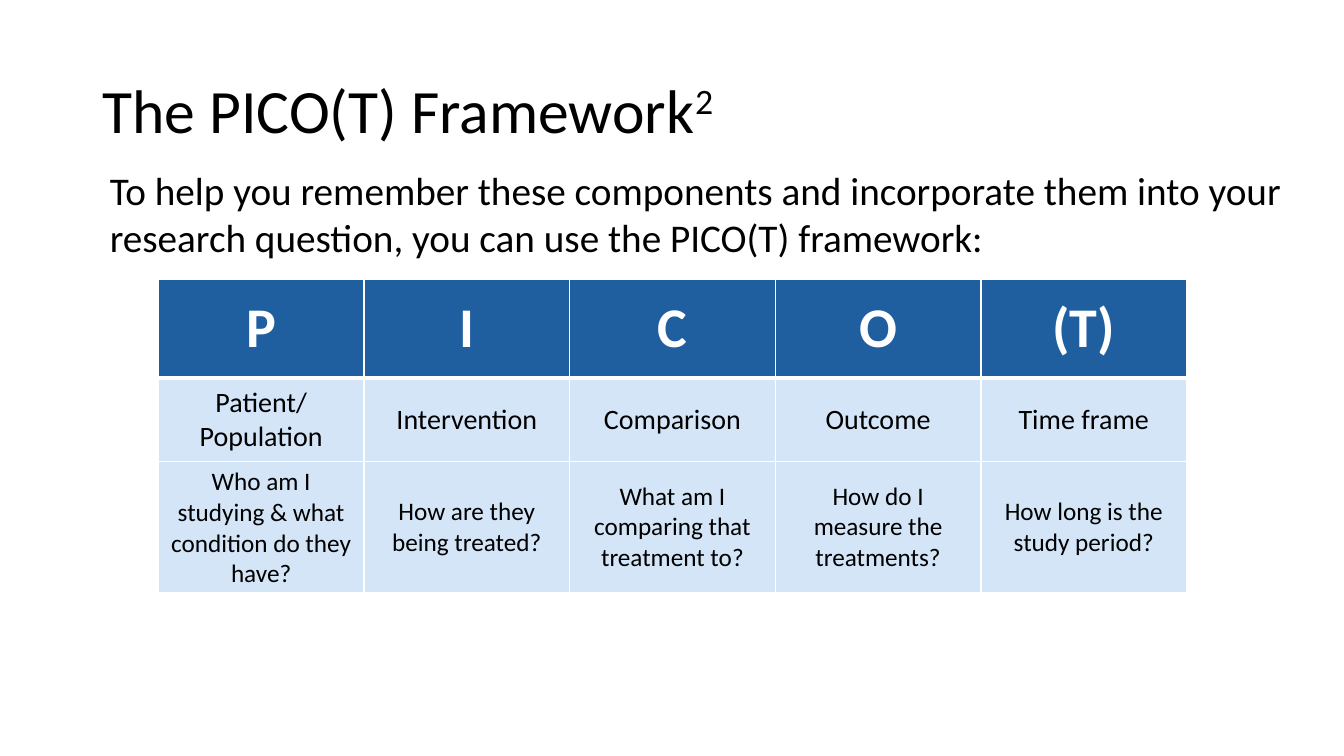
from lxml import etree
from pptx import Presentation
from pptx.dml.color import RGBColor
from pptx.enum.text import MSO_ANCHOR, PP_ALIGN
from pptx.oxml.ns import qn
from pptx.util import Pt

# Content
TITLE = "The PICO(T) Framework"
NOTE = "2"
INTRO = ("To help you remember these components and incorporate them into "
         "your research question, you can use the PICO(T) framework:")
ROWS = [
    ["P", "I", "C", "O", "(T)"],
    ["Patient/ Population", "Intervention", "Comparison", "Outcome",
     "Time frame"],
    ["Who am I studying & what condition do they have?",
     "How are they being treated?",
     "What am I comparing that treatment to?",
     "How do I measure the treatments?",
     "How long is the study period?"],
]

# Style
FONT = "Calibri"
BLACK = RGBColor(0x00, 0x00, 0x00)
WHITE = RGBColor(0xFF, 0xFF, 0xFF)
NAVY = RGBColor(0x1F, 0x5F, 0xA0)
PALE = RGBColor(0xD4, 0xE5, 0xF7)
MIDDLE = MSO_ANCHOR.MIDDLE
TOP = MSO_ANCHOR.TOP
CENTER = PP_ALIGN.CENTER

# Height in px, text size, text colour, fill, top and bottom line in points
LOOKS = [
    (98, 40, WHITE, NAVY, 1, 3),
    (83, 20, BLACK, PALE, 3, 1),
    (122, 18, BLACK, PALE, 1, 1),
]
COL = 204
PX = 9144  # EMU per px, 100 px to the inch


def px(*sizes):
    return [size * PX for size in sizes]


def style(para, size, color, bold=False):
    font = para.font
    font.name, font.size, font.bold = FONT, Pt(size), bold
    font.color.rgb = color


def add_text(slide, box, text, size, anchor):
    frame = slide.shapes.add_textbox(*px(*box)).text_frame
    frame.word_wrap = True
    frame.vertical_anchor = anchor
    para = frame.paragraphs[0]
    para.add_run().text = text
    style(para, size, BLACK)
    return para


def add_line(cell, side, width):
    props = cell._tc.get_or_add_tcPr()
    line = etree.SubElement(props, qn("a:ln" + side), w=str(Pt(width)))
    fill = etree.SubElement(line, qn("a:solidFill"))
    etree.SubElement(fill, qn("a:srgbClr"), val=str(WHITE))


def add_grid(slide):
    high = sum(look[0] for look in LOOKS)
    wide = COL * len(ROWS[0])
    table = slide.shapes.add_table(
        len(ROWS), len(ROWS[0]), *px(157, 277, wide, high)).table
    for r, (texts, look) in enumerate(zip(ROWS, LOOKS)):
        height, size, color, fill, top, bottom = look
        table.rows[r].height = height * PX
        for c, text in enumerate(texts):
            cell = table.cell(r, c)
            for side, width in zip("LRTB", (1, 1, top, bottom)):
                add_line(cell, side, width)
            cell.fill.solid()
            cell.fill.fore_color.rgb = fill
            cell.vertical_anchor = MIDDLE
            cell.text = text
            para = cell.text_frame.paragraphs[0]
            para.alignment = CENTER
            style(para, size, color, r == 0)


def main():
    deck = Presentation()
    deck.slide_width, deck.slide_height = px(1333, 750)
    slide = deck.slides.add_slide(deck.slide_layouts[6])

    # Title with its raised reference number
    title = add_text(slide, (92, 40, 1150, 145), TITLE, 44, MIDDLE)
    title.line_spacing = 0.9
    mark = title.add_run()
    mark.text = NOTE
    mark.font._element.set("baseline", "30000")

    # Introduction and table
    add_text(slide, (99, 160, 1199, 476), INTRO, 28, TOP)
    add_grid(slide)
    deck.save("out.pptx")


if __name__ == "__main__":
    main()
